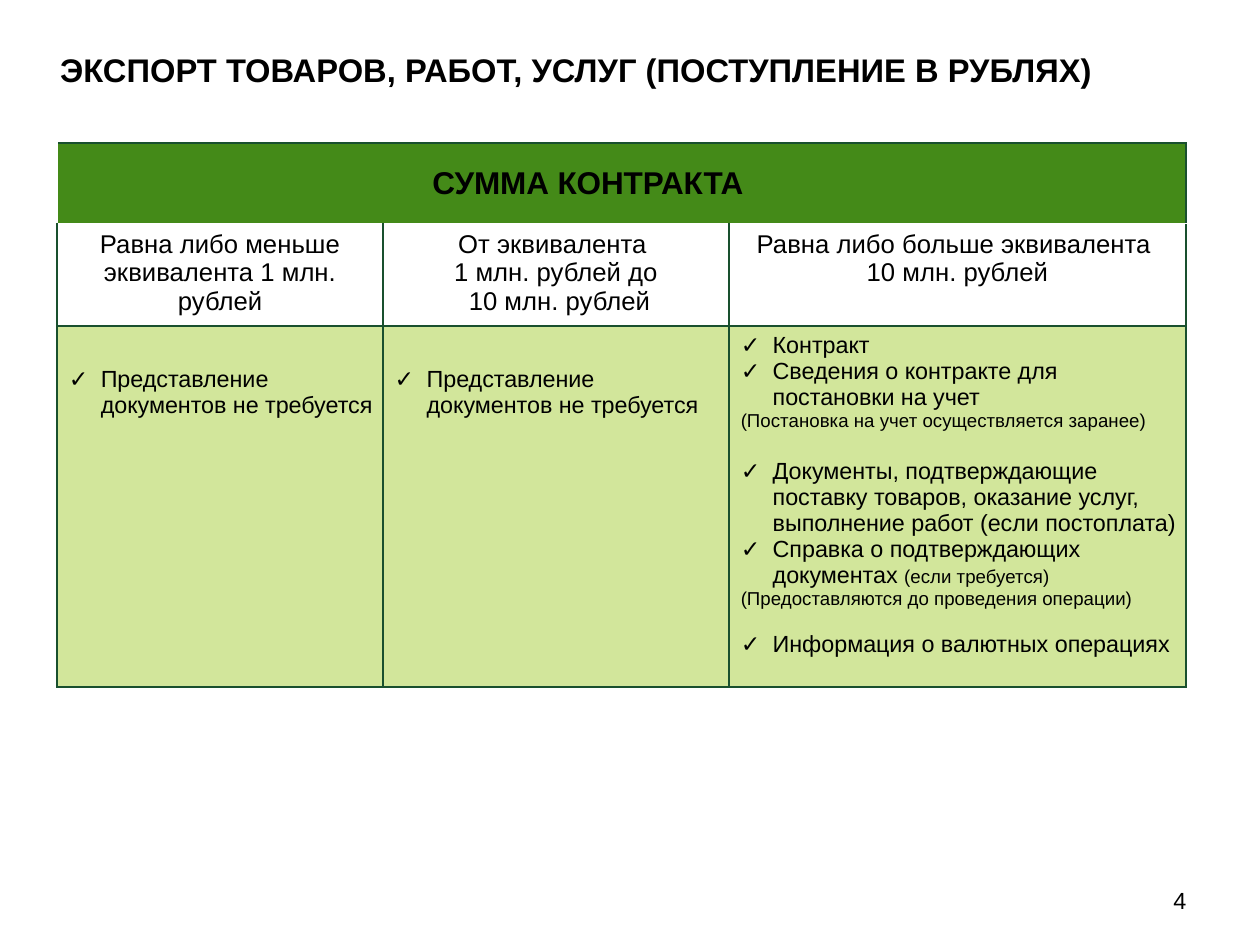
from lxml import etree
from pptx import Presentation
from pptx.dml.color import RGBColor
from pptx.enum.text import MSO_ANCHOR, PP_ALIGN
from pptx.oxml.ns import qn
from pptx.util import Inches, Pt

LEFT, MID, RIGHT = PP_ALIGN.LEFT, PP_ALIGN.CENTER, PP_ALIGN.RIGHT
TOP, CENTER, BOTTOM = MSO_ANCHOR.TOP, MSO_ANCHOR.MIDDLE, MSO_ANCHOR.BOTTOM
BLACK, WHITE, GREEN, LIME, EDGE = "000000", "FFFFFF", "448A18", "A6CE39", "19502E"

# Content
TITLE = "ЭКСПОРТ ТОВАРОВ, РАБОТ, УСЛУГ (ПОСТУПЛЕНИЕ В РУБЛЯХ)"
NUMBER = "4"
HEAD = "СУММА КОНТРАКТА"
SUMS = [
    ["Равна либо меньше эквивалента 1 млн. рублей"],
    ["От эквивалента ", " 1 млн. рублей до ", " 10 млн. рублей"],
    ["Равна либо больше эквивалента ", "10 млн. рублей"],
]
# Each item: runs of (text, size), ticked or not, space before
NONE = [([("Представление документов не требуется", 10)], True, 0)]
FULL = [
    ([("Контракт", 10)], True, 0),
    ([("Сведения о контракте для постановки на учет", 10)], True, 0),
    ([("(Постановка на учет осуществляется заранее)", 8)], False, 0),
    ([("Документы, подтверждающие поставку товаров, оказание услуг, "
       "выполнение работ (если постоплата)", 10)], True, 11.5),
    ([("Справка о подтверждающих документах ", 10), ("(если требуется)", 8)], True, 0),
    ([("(Предоставляются до проведения операции)", 8)], False, 0),
    ([("Информация о валютных операциях", 10)], True, 9),
]
PAPERS = [NONE, NONE, FULL]

# Grid in inches
WIDE = 7.5
HIGH = WIDE * 3 / 4
COLS = [1.94, 2.06, 2.72]
ROWS = [0.48, 0.61, 2.15]
X, Y = 0.34, 0.85


def color(code):
    return RGBColor.from_string(code)


def write(para, runs, align=LEFT, bold=False, tick=False, before=0, line=None):
    para.alignment = align
    if before:
        para.space_before = Pt(before)
    if line:
        para.line_spacing = line
    if tick:
        props = para._p.get_or_add_pPr()
        props.set("marL", str(Inches(0.19)))
        props.set("indent", str(-Inches(0.19)))
        etree.SubElement(props, qn("a:buFont"), typeface="Arial")
        etree.SubElement(props, qn("a:buChar"), char="✓")
    for text, size in runs:
        run = para.add_run()
        run.text = text
        run.font.name, run.font.size, run.font.bold = "Arial", Pt(size), bold
        run.font.color.rgb = color(BLACK)


def fill(frame, items):
    for i, (runs, form) in enumerate(items):
        write(frame.paragraphs[0] if i == 0 else frame.add_paragraph(), runs, **form)


def label(slide, box, text, size, anchor, **form):
    frame = slide.shapes.add_textbox(*map(Inches, box)).text_frame
    frame.word_wrap = True
    frame.vertical_anchor = anchor
    fill(frame, [([(text, size)], form)])


def paint(cell, code, alpha=None):
    cell.fill.solid()
    cell.fill.fore_color.rgb = color(code)
    if alpha:
        shade = cell._tc.tcPr.find(".//" + qn("a:srgbClr"))
        etree.SubElement(shade, qn("a:alpha"), val=str(alpha * 1000))


def border(cell, codes):
    for i, (side, code) in enumerate(zip("LRTB", codes)):
        edge = etree.Element(qn("a:ln" + side), w=str(Pt(0.75)))
        solid = etree.SubElement(edge, qn("a:solidFill"))
        etree.SubElement(solid, qn("a:srgbClr"), val=code)
        cell._tc.get_or_add_tcPr().insert(i, edge)


def inset(cell, left, right, top):
    cell.margin_left, cell.margin_right = Inches(left), Inches(right)
    cell.margin_top, cell.margin_bottom = Inches(top), Inches(0.03)


def build(slide):
    size = (X, Y, sum(COLS), sum(ROWS))
    grid = slide.shapes.add_table(len(ROWS), len(COLS), *map(Inches, size)).table
    grid.first_row = grid.horz_banding = False
    for col, wide in zip(grid.columns, COLS):
        col.width = Inches(wide)
    for row, high in zip(grid.rows, ROWS):
        row.height = Inches(high)

    # Header band
    head = grid.cell(0, 0)
    head.merge(grid.cell(0, len(COLS) - 1))
    inset(head, 0.03, 0.43, 0.04)
    head.vertical_anchor = CENTER
    fill(head.text_frame, [([(HEAD, 13.5)], dict(align=MID, bold=True))])

    # Contract sums and the papers each one needs
    for c, (lines, items) in enumerate(zip(SUMS, PAPERS)):
        top, low = grid.cell(1, c), grid.cell(2, c)
        inset(top, 0.07, 0.07, 0.04)
        inset(low, 0.07, 0.04, 0.04 if items is FULL else 0.24)
        top.vertical_anchor = low.vertical_anchor = TOP
        fill(top.text_frame, [([(text, 11)], dict(align=MID)) for text in lines])
        fill(low.text_frame, [(runs, dict(tick=tick, before=gap))
                              for runs, tick, gap in items])
        paint(grid.cell(0, c), GREEN)
        paint(top, WHITE)
        paint(low, LIME, alpha=50)
        border(grid.cell(0, c), [WHITE if c == 0 else EDGE, EDGE, EDGE, WHITE])
        border(top, [EDGE, EDGE, WHITE, EDGE])
        border(low, [EDGE] * 4)


def main():
    deck = Presentation()
    deck.slide_width, deck.slide_height = Inches(WIDE), Inches(HIGH)
    slide = deck.slides.add_slide(deck.slide_layouts[6])
    build(slide)
    label(slide, (0.26, 0.17, 6.9, 0.41), TITLE, 14, BOTTOM, bold=True, line=0.9)
    label(slide, (6.39, 5.21, 0.77, 0.3), NUMBER, 10, CENTER, align=RIGHT)
    deck.save("out.pptx")


if __name__ == "__main__":
    main()
